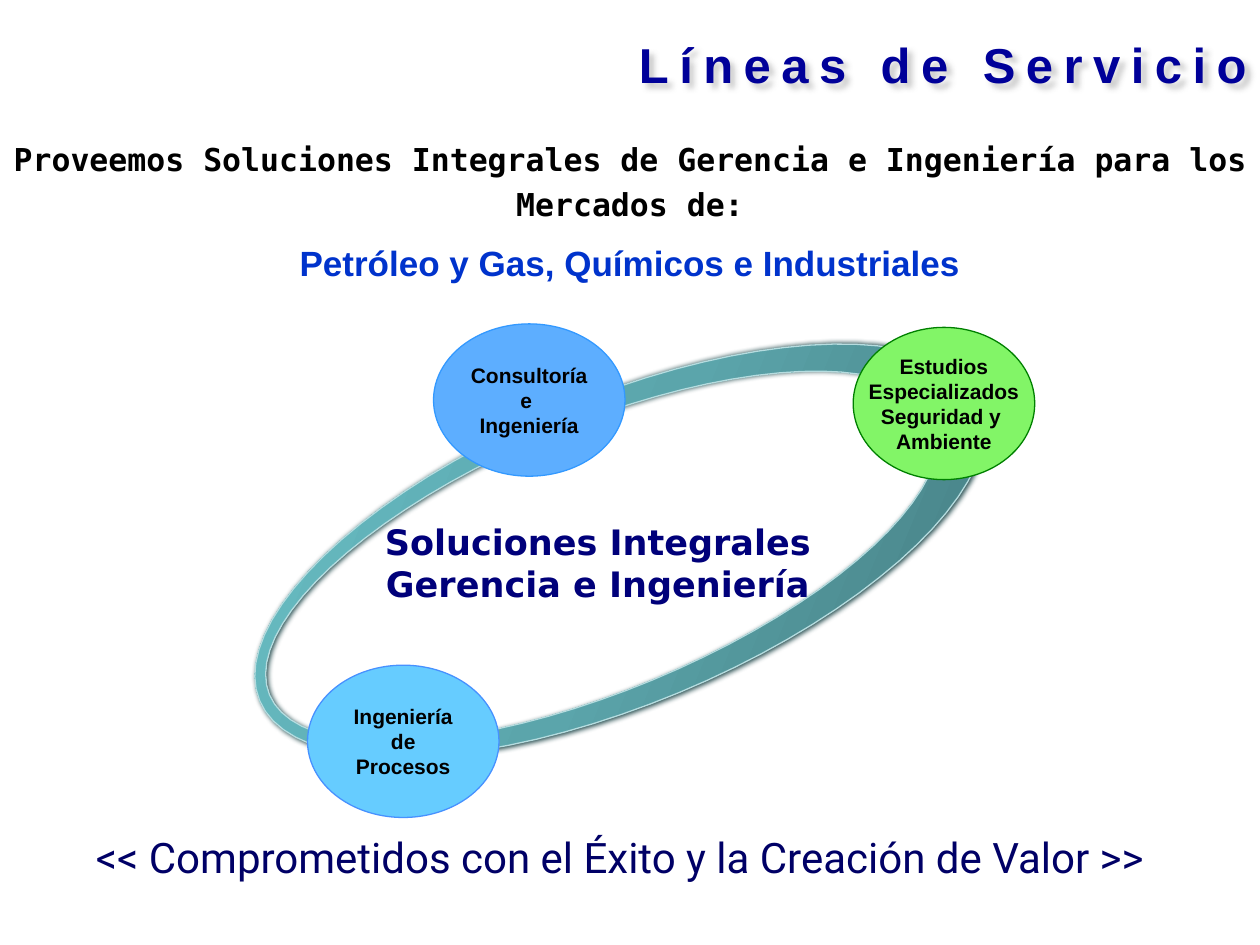
import math

import lxml.etree
import pptx
import pptx.dml.color
import pptx.enum.shapes
import pptx.enum.text
import pptx.oxml
import pptx.oxml.ns
import pptx.util

Cm, Pt = pptx.util.Cm, pptx.util.Pt
ALIGN, ANCHOR = pptx.enum.text.PP_ALIGN, pptx.enum.text.MSO_ANCHOR
qn = pptx.oxml.ns.qn

COLORS = {
    "title": "000099", "text": "000000", "markets": "0033CC",
    "slogan": "000066", "center": "00007A",
    "ring_dark": "407478", "ring_mid": "5BA5AB", "ring_light": "6BC4CB",
    "ring_line": "B6DCDF", "ring_shadow": "1E4649", "title_shadow": "808080",
}

TITLE = "Líneas de Servicio"
# Text boxes: (left, top, width, height) in cm, then (text, size, font, color, bold)
TEXTS = [
    ((0, 2.54, 25.4, 2.41), [
        ("Proveemos Soluciones Integrales de Gerencia e Ingeniería para los Mercados de:",
         18, "DejaVu Sans Mono", "text", True),
        ("Petróleo y Gas, Químicos e Industriales", 20, "Arial", "markets", True)]),
    ((1.09, 16.64, 22.81, 1.3), [
        ("<< Comprometidos con el Éxito y la Creación de Valor >>",
         24, "Roboto", "slogan", False)]),
    ((6.25, 10.36, 11.61, 1.96), [
        ("Soluciones Integrales Gerencia e Ingeniería",
         20, "DejaVu Sans", "center", True)]),
]
# Service ellipses: box in cm, fill, line, lines of text
SERVICES = [
    ((8.74, 6.53, 3.86, 3.07), "5DAEFF", "3399FF", ["Consultoría", "e ", "Ingeniería"]),
    ((6.2, 13.41, 3.86, 3.07), "66CCFF", "4791FF", ["Ingeniería", "de", "Procesos"]),
    ((17.2, 6.6, 3.66, 3.07), "82F567", "008000",
     ["Estudios", "Especializados", "Seguridad y ", "Ambiente"]),
]
# Ring ellipses before rotation: center x, center y, radius x, radius y in cm
RING_OUTER = (12.5, 11.1, 7.87, 3.1)
RING_INNER = (12.12, 11.07, 7.26, 2.69)
RING_ANGLE = -22.6
RING_STEPS = 80


def rgb(value):
    return pptx.dml.color.RGBColor.from_string(value)


def style(p, size, font, color, bold):
    p.alignment = ALIGN.CENTER
    for r in p.runs:
        r.font.size, r.font.name, r.font.bold = Pt(size), font, bold
        r.font.color.rgb = rgb(COLORS[color])


def add_shadow(sp, color, alpha, blur, dist, angle):
    effects = sp._element.spPr.find(qn("a:effectLst"))
    if effects is None:
        effects = lxml.etree.SubElement(sp._element.spPr, qn("a:effectLst"))
    shadow = lxml.etree.SubElement(
        effects, qn("a:outerShdw"), blurRad=str(Pt(blur)), dist=str(Pt(dist)),
        dir=str(angle * 60000), algn="ctr", rotWithShape="0")
    clr = lxml.etree.SubElement(shadow, qn("a:srgbClr"), val=color)
    lxml.etree.SubElement(clr, qn("a:alpha"), val=str(alpha * 1000))


def ellipse_points(cx, cy, rx, ry, direction):
    angles = [direction * 2 * math.pi * i / RING_STEPS for i in range(RING_STEPS)]
    return [(Cm(cx + rx * math.cos(a)), Cm(cy + ry * math.sin(a))) for a in angles]


def add_ring(s):
    outer, inner = ellipse_points(*RING_OUTER, 1), ellipse_points(*RING_INNER, -1)
    builder = s.shapes.build_freeform(*outer[0])
    builder.add_line_segments(outer[1:], close=True)
    builder.move_to(*inner[0])
    builder.add_line_segments(inner[1:], close=True)
    sp = builder.convert_to_shape()
    sp.rotation = RING_ANGLE
    sp.line.color.rgb = rgb(COLORS["ring_line"])
    sp.line.width = Pt(0.75)
    # Three-stop gradient, dark at the lower right
    sp.fill.gradient()
    grad = sp._element.spPr.find(qn("a:gradFill"))
    stops = grad.find(qn("a:gsLst"))
    for old in list(stops):
        stops.remove(old)
    for pos, name in ((0, "ring_dark"), (50, "ring_mid"), (100, "ring_light")):
        stop = lxml.etree.SubElement(stops, qn("a:gs"), pos=str(pos * 1000))
        lxml.etree.SubElement(stop, qn("a:srgbClr"), val=COLORS[name])
    grad.find(qn("a:lin")).set("ang", str(225 * 60000))
    sp.shadow.inherit = False
    add_shadow(sp, COLORS["ring_shadow"], 100, 3.1, 1, 0)


def add_text(s, box, paragraphs):
    tf = s.shapes.add_textbox(*map(Cm, box)).text_frame
    tf.word_wrap = True
    tf.text = "\n".join(text for text, *_ in paragraphs)
    for p, (_, *look) in zip(tf.paragraphs, paragraphs):
        style(p, *look)
    if len(paragraphs) > 1:
        for p in tf.paragraphs:
            p.line_spacing = 1.2
        tf.paragraphs[0].space_after = Pt(6)


def add_service(s, box, fill, line, lines):
    sp = s.shapes.add_shape(pptx.enum.shapes.MSO_SHAPE.OVAL, *map(Cm, box))
    sp.shadow.inherit = False
    sp.fill.solid()
    sp.fill.fore_color.rgb = rgb(fill)
    sp.line.color.rgb = rgb(line)
    sp.line.width = Pt(0.75)
    tf = sp.text_frame
    tf.word_wrap = False
    tf.vertical_anchor = ANCHOR.MIDDLE
    tf.text = "\n".join(lines)
    for p in tf.paragraphs:
        style(p, 12, "Arial", "text", True)


def main():
    prs = pptx.Presentation()
    prs.slide_width, prs.slide_height = Cm(25.4), Cm(19.05)
    s = prs.slides.add_slide(prs.slide_layouts[5])

    # Title
    title = s.shapes.title
    title.left, title.top, title.width, title.height = map(Cm, (0.71, 0.56, 24.69, 1.45))
    tf = title.text_frame
    tf.text = TITLE
    tf.vertical_anchor = ANCHOR.MIDDLE
    p = tf.paragraphs[0]
    style(p, 28, "Arial", "title", True)
    p.alignment = ALIGN.RIGHT
    p.runs[0]._r.get_or_add_rPr().set("spc", "600")
    add_shadow(title, COLORS["title_shadow"], 40, 3, 3, 45)

    # Ring, service ellipses, then text
    add_ring(s)
    for service in SERVICES:
        add_service(s, *service)
    for box, paragraphs in TEXTS:
        add_text(s, box, paragraphs)

    prs.save("out.pptx")


if __name__ == "__main__":
    main()
